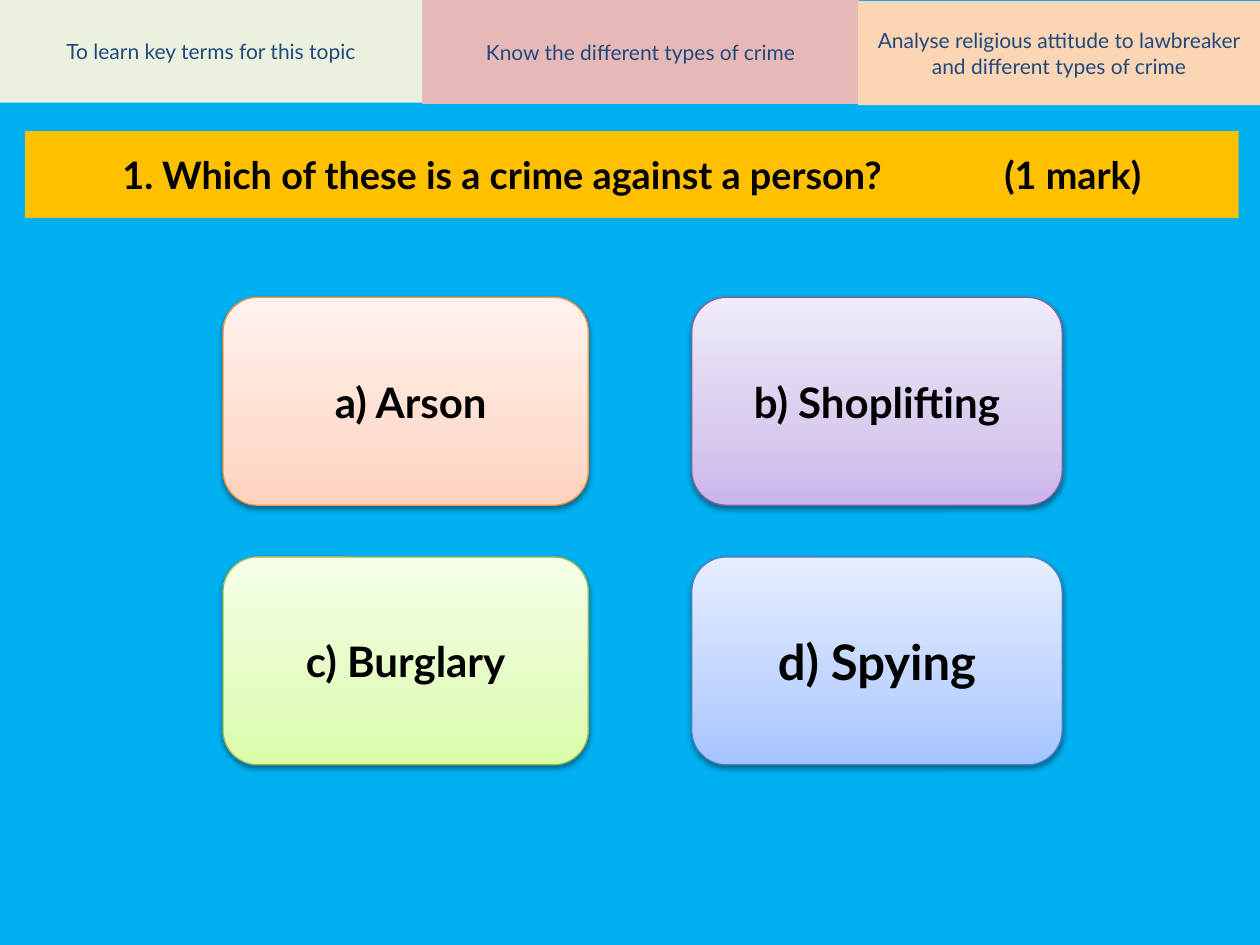
from typing import NamedTuple

from lxml.etree import SubElement as Sub
from pptx import Presentation
from pptx.dml.color import RGBColor as RGB
from pptx.enum.shapes import MSO_SHAPE as Kind
from pptx.enum.text import MSO_ANCHOR as Anchor, MSO_AUTO_SIZE as Auto, PP_ALIGN as Align
from pptx.oxml.ns import qn
from pptx.util import Inches, Pt

WIDE, HIGH = 10, 7.5
ROWS = (2.36, 4.42)
COLS = ((1.77, 2.9), (5.49, 2.94))  # left, width
CARD_HIGH = 1.65


class Goal(NamedTuple):
    text: str
    left: float
    top: float
    width: float
    fill: str


class Card(NamedTuple):
    text: str
    row: int
    col: int
    stops: tuple[str, str, str]  # bottom to top
    edge: str
    size: int = 24


GOALS = (
    Goal("Know the different types of crime", 3.35, 0, 3.47, "E6B9B8"),
    Goal("Analyse religious attitude to lawbreaker and different types of crime",
         6.81, 0.01, 3.19, "FCD5B5"),
    Goal("To learn key terms for this topic", 0, -0.01, 3.35, "EBF1DE"),
)
CARDS = (
    Card(" a) Arson", 0, 0, ("FFD2BD", "FFDED0", "FFF2ED"), "F69240"),
    Card("d) Spying", 1, 1, ("A4C4FF", "BFD4FF", "E6EEFF"), "4B7EBC", 28),
    Card("c) Burglary", 1, 0, ("DAFDA7", "E4FCC2", "F5FFE7"), "98B955"),
    Card("b) Shoplifting", 0, 1, ("C9B5E8", "D8CBEE", "F0EAF9"), "7D60A0"),
)


def paint(fill, color: str) -> None:
    fill.solid()
    fill.fore_color.rgb = RGB.from_string(color)


def write(shape, text: str, *, size: float, color: str = "000000", bold: bool = True):
    frame = shape.text_frame
    frame.word_wrap = True
    frame.auto_size = Auto.NONE
    frame.vertical_anchor = Anchor.MIDDLE
    para = frame.paragraphs[0]
    para.alignment = Align.CENTER
    run = para.add_run()
    run.text = text
    font = run.font
    font.name, font.size, font.bold = "Lato", Pt(size), bold
    font.color.rgb = RGB.from_string(color)
    return para


def add_box(slide, kind: Kind, left: float, top: float, width: float, height: float):
    box = slide.shapes.add_shape(kind, *map(Inches, (left, top, width, height)))
    box.shadow.inherit = False
    return box


def shade(box, stops: tuple[str, str, str]) -> None:
    box.fill.gradient()
    box.fill.gradient_angle = 90
    holder = box.element.spPr.find(".//" + qn("a:gsLst"))
    for old in list(holder):
        holder.remove(old)
    for share, color in zip((0, 35, 100), stops):
        stop = Sub(holder, qn("a:gs"), pos=str(share * 1000))
        Sub(stop, qn("a:srgbClr"), val=color)


def cast(box) -> None:
    """Add a soft shadow below the box."""
    effects = box.element.spPr.find(qn("a:effectLst"))
    drop = Sub(effects, qn("a:outerShdw"), blurRad=str(Pt(3.1)), dist=str(Pt(1.6)),
               dir="5400000", rotWithShape="0")
    color = Sub(drop, qn("a:srgbClr"), val="000000")
    Sub(color, qn("a:alpha"), val="38000")


def add_title(slide) -> None:
    title = slide.shapes.title
    title.left, title.top, title.width, title.height = map(Inches, (0.2, 1.04, 9.63, 0.69))
    paint(title.fill, "FFC000")
    para = write(title, "1. Which of these is a crime against a person?\t(1 mark)", size=21.6)
    props = para._p.get_or_add_pPr()
    props.set("defTabSz", str(Inches(1)))
    tabs = Sub(props, qn("a:tabLst"))
    Sub(tabs, qn("a:tab"), pos=str(Inches(7)), algn="l")


def add_goal(slide, goal: Goal) -> None:
    box = add_box(slide, Kind.RECTANGLE, goal.left, goal.top, goal.width, 0.11 * HIGH)
    paint(box.fill, goal.fill)
    box.line.fill.background()
    write(box, goal.text, size=12, color="1F497D", bold=False)


def add_card(slide, card: Card) -> None:
    left, width = COLS[card.col]
    box = add_box(slide, Kind.ROUNDED_RECTANGLE, left, ROWS[card.row], width, CARD_HIGH)
    shade(box, card.stops)
    paint(box.line.fill, card.edge)
    box.line.width = Pt(0.75)
    cast(box)
    write(box, card.text, size=card.size)


def main() -> None:
    deck = Presentation()
    deck.slide_width, deck.slide_height = Inches(WIDE), Inches(HIGH)
    slide = deck.slides.add_slide(deck.slide_layouts[5])
    paint(slide.background.fill, "00B0F0")
    add_title(slide)
    for goal in GOALS:
        add_goal(slide, goal)
    for card in CARDS:
        add_card(slide, card)
    deck.save("out.pptx")


if __name__ == "__main__":
    main()
